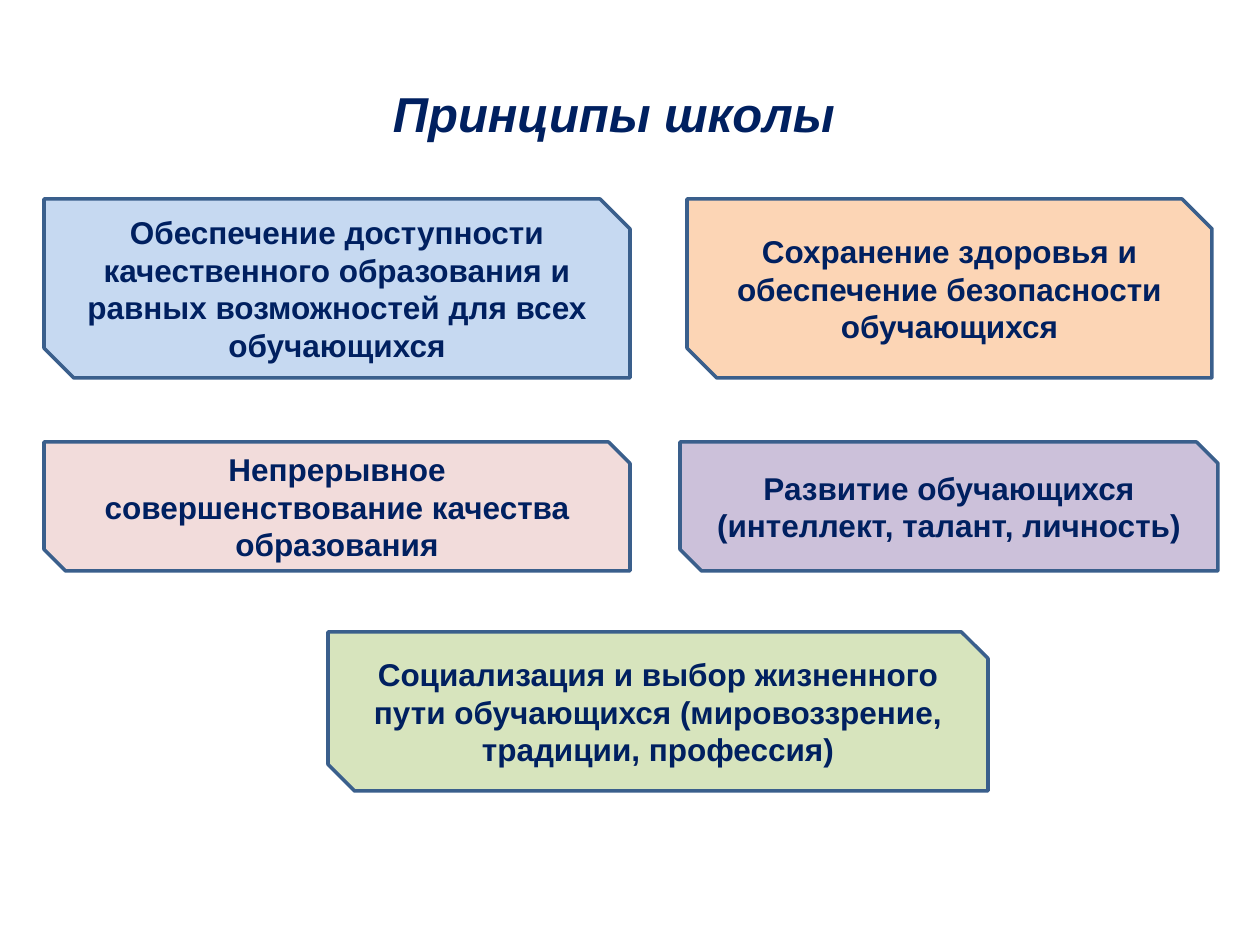
from pptx import Presentation
from pptx.dml.color import RGBColor
from pptx.enum.shapes import MSO_SHAPE as Shape
from pptx.enum.text import MSO_ANCHOR as Anchor, PP_ALIGN as Align
from pptx.util import Emu, Pt

PX_PER_INCH = 126
NAVY = "002060"
BORDER = "3A5F8C"

# Rows of cards: (top, height, [(left, width, fill, text), ...])
ROWS = [
    (199, 179, [
        (44, 586, "C6D9F1", "Обеспечение доступности качественного образования "
                            "и равных возможностей для всех обучающихся"),
        (687, 525, "FCD5B5", "Сохранение здоровья и обеспечение безопасности обучающихся"),
    ]),
    (442, 129, [
        (44, 586, "F2DCDB", "Непрерывное совершенствование качества образования"),
        (680, 538, "CCC1DA", "Развитие обучающихся (интеллект, талант, личность)"),
    ]),
    (632, 159, [
        (328, 660, "D7E4BD", "Социализация и выбор жизненного пути обучающихся "
                             "(мировоззрение, традиции, профессия)"),
    ]),
]


def px(length):
    return Emu(round(length * 914400 / PX_PER_INCH))


def color(hex_string):
    return RGBColor.from_string(hex_string)


def write_text(shape, text, size, anchor, italic=False):
    text_frame = shape.text_frame
    text_frame.text = text
    text_frame.word_wrap = True
    text_frame.vertical_anchor = anchor
    paragraph = text_frame.paragraphs[0]
    paragraph.alignment = Align.CENTER
    font = paragraph.runs[0].font
    font.name = "Arial"
    font.size = Pt(size)
    font.bold = True
    font.italic = italic
    font.color.rgb = color(NAVY)


def set_title(slide, text):
    title = slide.shapes.title
    title.left, title.top, title.width, title.height = map(px, (338, 81, 635, 118))
    write_text(title, text, 28, Anchor.TOP, italic=True)
    # The heading sits high and left of centre in its box
    title.text_frame.margin_top = px(3)
    title.text_frame.margin_right = px(96)


def add_card(slide, left, top, width, height, fill, text):
    card = slide.shapes.add_shape(Shape.SNIP_2_DIAG_RECTANGLE,
                                  px(left), px(top), px(width), px(height))
    card.shadow.inherit = False
    card.fill.solid()
    card.fill.fore_color.rgb = color(fill)
    card.line.color.rgb = color(BORDER)
    card.line.width = Pt(2)
    write_text(card, text, 18, Anchor.MIDDLE)


def main():
    presentation = Presentation()
    presentation.slide_width, presentation.slide_height = px(1260), px(945)
    slide = presentation.slides.add_slide(presentation.slide_layouts[5])

    # Heading
    set_title(slide, "Принципы школы")

    # Principles
    for top, height, cards in ROWS:
        for left, width, fill, text in cards:
            add_card(slide, left, top, width, height, fill, text)

    presentation.save("out.pptx")


if __name__ == "__main__":
    main()
